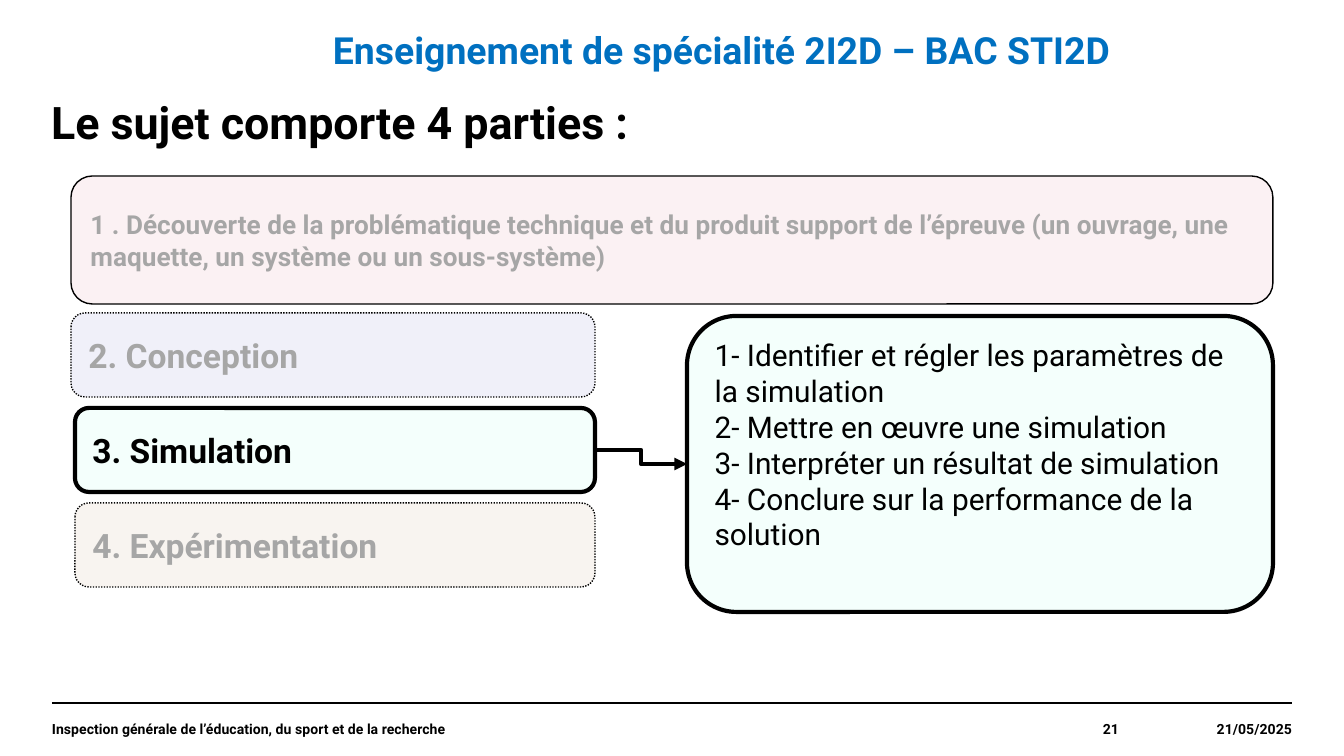
import pptx
import pptx.util
import pptx.dml.color
import pptx.enum.dml
import pptx.enum.shapes
import pptx.enum.text
import pptx.oxml
import pptx.oxml.ns

SCALE = 914400 / 134.4
FONT = "Roboto"
COLORS = {
    "black": "000000",
    "blue": "0070C0",
    "grey": "A6A6A6",
    "pink": "F2C9D1",
    "lilac": "C6C6EA",
    "mint": "D5FFF4",
    "sand": "E7D4C6",
    "pale": "F4FFFC",
}
ALIGN = pptx.enum.text.PP_ALIGN
ANCHOR = pptx.enum.text.MSO_ANCHOR
LINK = pptx.enum.shapes.MSO_CONNECTOR
DOTS = pptx.enum.dml.MSO_LINE.ROUND_DOT


def px(value):
    return pptx.util.Emu(round(value * SCALE))


def color(name):
    return pptx.dml.color.RGBColor.from_string(COLORS[name])


def child(parent, tag, **attrs):
    node = pptx.oxml.parse_xml(f"<a:{tag} {pptx.oxml.ns.nsdecls('a')}/>")
    for key, value in attrs.items():
        node.set(key, value)
    parent.append(node)


class Page:
    def __init__(self, deck):
        self.slide = deck.slides.add_slide(deck.slide_layouts[5])
        self.shapes = self.slide.shapes

    def style(self, shape, text, size, ink="black", bold=True,
              align=ALIGN.LEFT, anchor=ANCHOR.TOP, inset=None):
        frame = shape.text_frame
        frame.text = text
        frame.word_wrap = True
        frame.auto_size = pptx.enum.text.MSO_AUTO_SIZE.NONE
        frame.vertical_anchor = anchor
        if inset is not None:
            frame.margin_left = frame.margin_right = px(inset)
            frame.margin_top = frame.margin_bottom = px(inset)
        for par in frame.paragraphs:
            par.alignment = align
            for run in par.runs:
                run.font.name = FONT
                run.font.size = pptx.util.Pt(size)
                run.font.bold = bold
                run.font.color.rgb = color(ink)

    def title(self, text, x, y, w, h):
        shape = self.shapes.title
        shape.left, shape.top, shape.width, shape.height = map(px, (x, y, w, h))
        self.style(shape, text, 24, inset=0)
        shape.text_frame.paragraphs[0].line_spacing = 0.9

    def label(self, text, x, y, w, h, size, **look):
        shape = self.shapes.add_textbox(*map(px, (x, y, w, h)))
        self.style(shape, text, size, inset=0, **look)

    def box(self, text, x, y, w, h, size, fill, alpha=None, line=0.75,
            dash=None, anchor=ANCHOR.MIDDLE, **look):
        kind = pptx.enum.shapes.MSO_SHAPE.ROUNDED_RECTANGLE
        shape = self.shapes.add_shape(kind, *map(px, (x, y, w, h)))
        shape.shadow.inherit = False
        shape.fill.solid()
        shape.fill.fore_color.rgb = color(fill)
        if alpha:
            tint = shape._element.spPr.find(
                "/".join(map(pptx.oxml.ns.qn, ("a:solidFill", "a:srgbClr"))))
            child(tint, "alpha", val=str(alpha * 1000))
        shape.line.color.rgb = color("black")
        shape.line.width = pptx.util.Pt(line)
        if dash:
            shape.line.dash_style = dash
        self.style(shape, text, size, anchor=anchor, **look)
        return shape

    def link(self, kind, x1, y1, x2, y2, width):
        line = self.shapes.add_connector(kind, *map(px, (x1, y1, x2, y2)))
        line.line.color.rgb = color("black")
        line.line.width = pptx.util.Pt(width)
        child(line._element.spPr, "effectLst")
        return line

    def arrow(self, start, end):
        line = self.link(LINK.ELBOW, 595, 450, 687, 464, 2.25)
        line.begin_connect(start, 3)
        line.end_connect(end, 1)
        stroke = line._element.spPr.find(pptx.oxml.ns.qn("a:ln"))
        child(stroke, "tailEnd", type="triangle")


def main():
    deck = pptx.Presentation()
    deck.slide_width, deck.slide_height = px(1344), px(756)
    page = Page(deck)

    page.link(LINK.STRAIGHT, 52, 703, 1292, 703, 0.8)
    page.title("Le sujet comporte 4 parties :", 51, 101, 1238, 52)
    page.label("Enseignement de spécialité 2I2D – BAC STI2D",
               333, 27, 836, 52, 20, ink="blue")

    notes = [
        ("21/05/2025", 1120, 172, ALIGN.RIGHT),
        ("Inspection générale de l’éducation, du sport et de la recherche",
         52, 868, ALIGN.LEFT),
        ("21", 920, 199, ALIGN.RIGHT),
    ]
    for text, x, w, align in notes:
        page.label(text, x, 703, w, 52, 7.5, align=align, anchor=ANCHOR.MIDDLE)

    page.box("1 . Découverte de la problématique technique et du produit "
             "support de l’épreuve (un ouvrage, une maquette, un système ou "
             "un sous-système)",
             71, 176, 1202, 128, 14, "pink", 25, ink="grey")

    parts = [
        ("2. Conception", 71, "lilac", "grey", 0.75, DOTS),
        ("3. Simulation", 75, "mint", "black", 2.25, None),
        ("4. Expérimentation", 75, "sand", "grey", 0.75, DOTS),
    ]
    boxes = [
        page.box(text, x, 313 + 95 * i, 595 - x, 84, 18, fill, 25,
                 line=line, dash=dash, ink=ink)
        for i, (text, x, fill, ink, line, dash) in enumerate(parts)
    ]

    steps = [
        "1- Identifier et régler les paramètres de la simulation",
        "2- Mettre en œuvre une simulation",
        "3- Interpréter un résultat de simulation",
        "4- Conclure sur la performance de la solution",
    ]
    panel = page.box("\n".join(steps), 687, 316, 586, 296, 16, "pale",
                     line=2.25, bold=False, anchor=ANCHOR.TOP)
    page.arrow(boxes[1], panel)

    deck.save("out.pptx")


if __name__ == "__main__":
    main()
